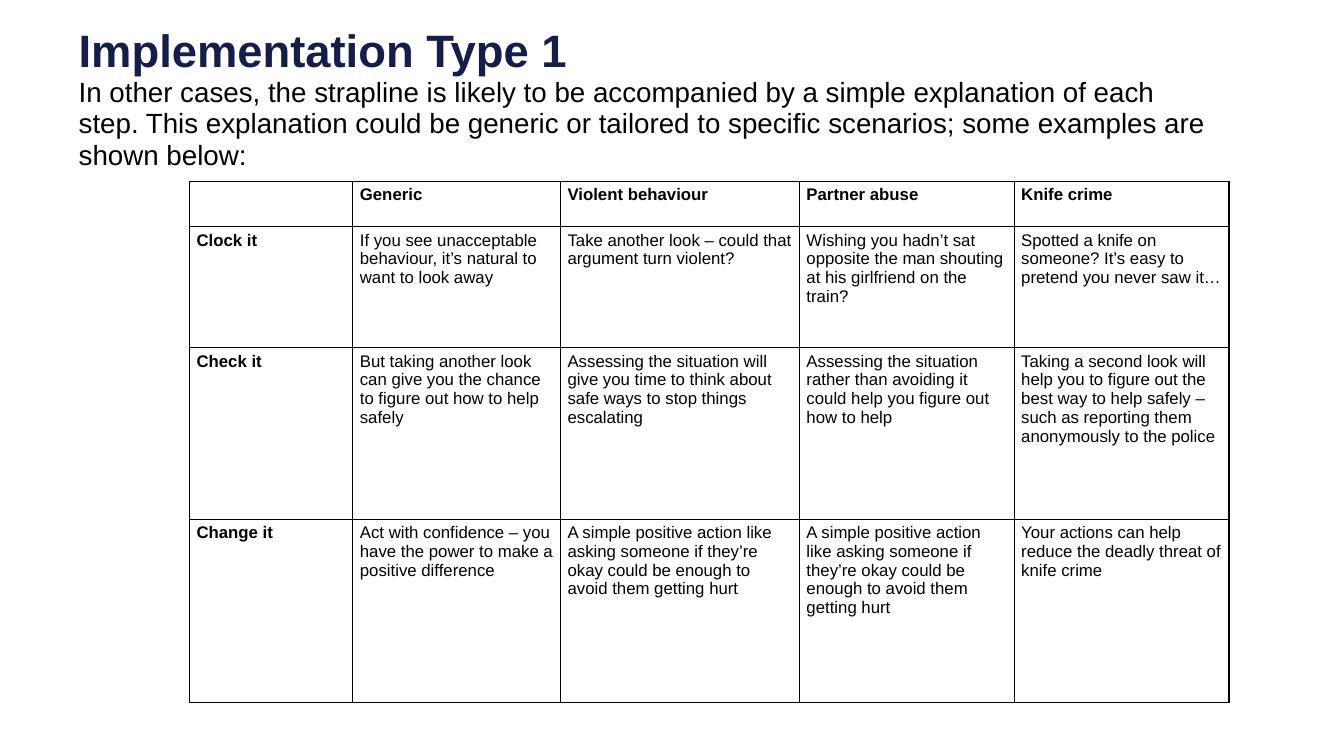
from dataclasses import dataclass

import pptx
import pptx.dml.color
import pptx.enum.text
import pptx.oxml
import pptx.oxml.ns
import pptx.util

PX = 9144  # EMU in one px, at 100 px to the inch


@dataclass(frozen=True)
class Theme:
    font: str = "Arial"
    navy: str = "141E4C"
    black: str = "000000"
    head: float = 32.4
    lead: float = 19.8
    cell: float = 12
    rule: float = 1


@dataclass(frozen=True)
class Box:
    left: int
    top: int
    width: int
    height: int

    def emu(self) -> tuple[int, ...]:
        return tuple(px(n) for n in (self.left, self.top, self.width, self.height))


@dataclass(frozen=True)
class Row:
    height: int
    label: str
    texts: tuple[str, ...]


THEME = Theme()
TITLE = Box(68, 79, 1150, 96)
GRID = Box(188, 180, 1031, 517)
COLS = (162, 206, 237, 213, 213)
LEAD = (
    "In other cases, the strapline is likely to be accompanied by a simple "
    "explanation of each step. This explanation could be generic or tailored "
    "to specific scenarios; some examples are shown below:"
)
ACTION = (
    "A simple positive action like asking someone if they’re okay "
    "could be enough to avoid them getting hurt"
)
ROWS = (
    Row(45, "", ("Generic", "Violent behaviour", "Partner abuse", "Knife crime")),
    Row(120, "Clock it", (
        "If you see unacceptable behaviour, it’s natural to want to look away",
        "Take another look – could that argument turn violent?",
        "Wishing you hadn’t sat opposite the man shouting at his girlfriend on the train?",
        "Spotted a knife on someone? It’s easy to pretend you never saw it…",
    )),
    Row(170, "Check it", (
        "But taking another look can give you the chance to figure out how to help safely",
        "Assessing the situation will give you time to think about safe ways "
        "to stop things escalating",
        "Assessing the situation rather than avoiding it could help you figure out how to help",
        "Taking a second look will help you to figure out the best way to help safely – "
        "such as reporting them anonymously to the police",
    )),
    Row(182, "Change it", (
        "Act with confidence – you have the power to make a positive difference",
        ACTION,
        ACTION,
        "Your actions can help reduce the deadly threat of knife crime",
    )),
)


def px(n: int) -> int:
    return pptx.util.Emu(n * PX)


def write(para, text: str, *, size: float, color: str = THEME.black,
          bold: bool = False) -> None:
    """Add one formatted run to a paragraph."""
    run = para.add_run()
    run.text = text
    font = run.font
    font.name = THEME.font
    font.size = pptx.util.Pt(size)
    font.bold = bold
    font.color.rgb = pptx.dml.color.RGBColor.from_string(color)


def outline(cell) -> None:
    """Rule all four sides of a cell."""
    props = cell._tc.get_or_add_tcPr()
    width = pptx.util.Pt(THEME.rule)
    for side in "LRTB":
        props.append(pptx.oxml.parse_xml(
            f'<a:ln{side} {pptx.oxml.ns.nsdecls("a")} w="{width}"><a:solidFill>'
            f'<a:srgbClr val="{THEME.black}"/></a:solidFill></a:ln{side}>'
        ))


def fill(cell, text: str, bold: bool) -> None:
    outline(cell)
    cell.fill.background()
    cell.margin_left = cell.margin_right = px(7)
    cell.margin_top = cell.margin_bottom = px(4)
    if text:
        write(cell.text_frame.paragraphs[0], text, size=THEME.cell, bold=bold)


def head(slide) -> None:
    title = slide.shapes.title
    title.left, title.top, title.width, title.height = TITLE.emu()
    frame = title.text_frame
    frame.word_wrap = True
    frame.auto_size = pptx.enum.text.MSO_AUTO_SIZE.NONE
    frame.vertical_anchor = pptx.enum.text.MSO_ANCHOR.BOTTOM
    para = frame.paragraphs[0]
    para.alignment = pptx.enum.text.PP_ALIGN.LEFT
    para.line_spacing = 0.94
    write(para, "Implementation Type 1", size=THEME.head, color=THEME.navy, bold=True)
    para.add_line_break()
    write(para, LEAD, size=THEME.lead)


def grid(slide) -> None:
    table = slide.shapes.add_table(len(ROWS), len(COLS), *GRID.emu()).table
    table.first_row = table.horz_banding = False
    for col, width in zip(table.columns, COLS):
        col.width = px(width)
    for r, row in enumerate(ROWS):
        table.rows[r].height = px(row.height)
        for c, text in enumerate((row.label, *row.texts)):
            fill(table.cell(r, c), text, bold=r == 0 or c == 0)


def main() -> None:
    deck = pptx.Presentation()
    deck.slide_width, deck.slide_height = px(1333), px(750)
    slide = deck.slides.add_slide(deck.slide_layouts.get_by_name("Title Only"))
    head(slide)
    grid(slide)
    deck.save("out.pptx")


if __name__ == "__main__":
    main()
